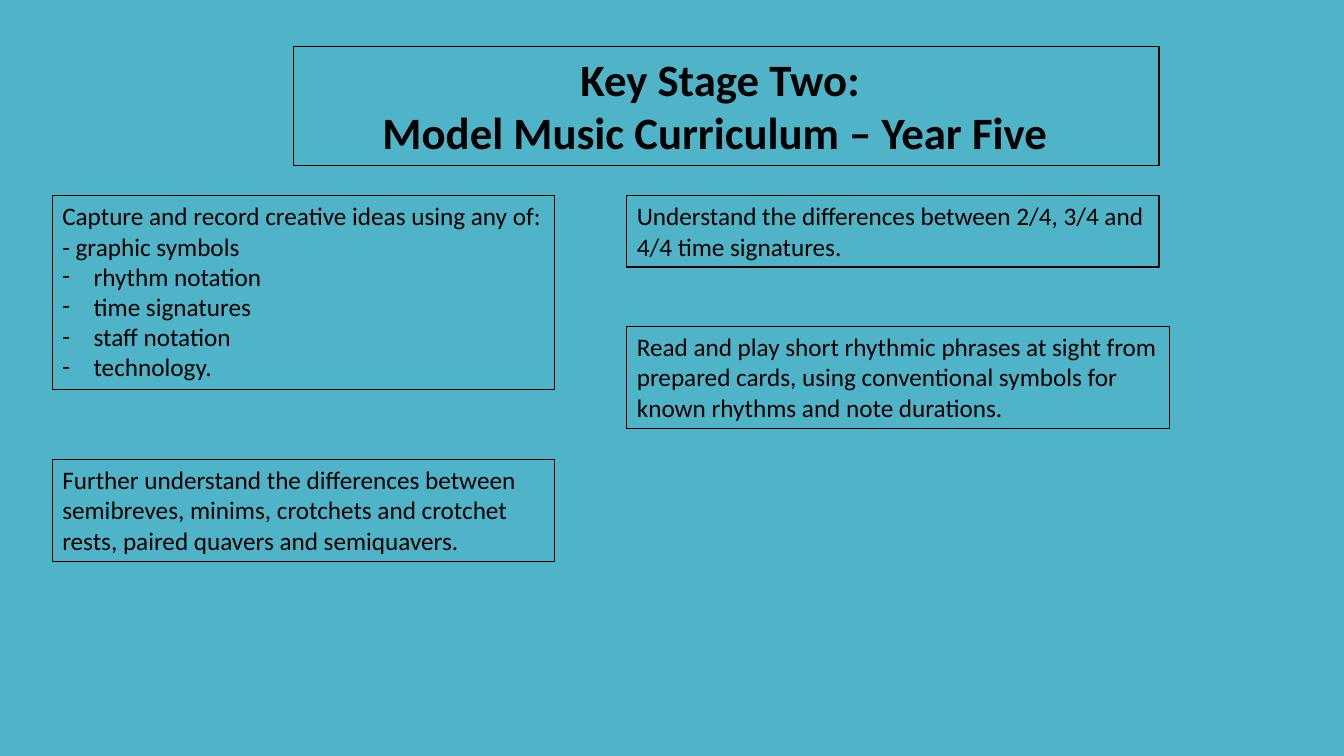
from dataclasses import dataclass

from lxml.etree import SubElement
from pptx import Presentation
from pptx.dml.color import RGBColor
from pptx.enum.shapes import MSO_SHAPE
from pptx.enum.text import MSO_ANCHOR, MSO_AUTO_SIZE, PP_ALIGN
from pptx.oxml.ns import qn
from pptx.slide import Slide
from pptx.util import Cm, Pt

FONT = "Calibri"
BACKGROUND = "50B4C8"
INK = "000000"
BULLET_INDENT = 0.79
LEFT_COLUMN, RIGHT_COLUMN = 1.32, 15.8
FIRST_ROW = 4.93


@dataclass(frozen=True)
class Line:
    text: str
    bullet: bool = False
    right_margin: float = 0


@dataclass(frozen=True)
class Box:
    left: float
    top: float
    width: float
    height: float
    lines: tuple[Line, ...]
    title: bool = False


BOXES = (
    Box(7.39, 1.17, 21.82, 3, (
        Line("Key Stage Two:", right_margin=0.3),
        Line("Model Music Curriculum – Year Five", right_margin=0.55),
    ), title=True),
    Box(LEFT_COLUMN, FIRST_ROW, 12.65, 4.88, (
        Line("Capture and record creative ideas using any of: - graphic symbols"),
        Line("rhythm notation", bullet=True),
        Line("time signatures", bullet=True),
        Line("staff notation", bullet=True),
        Line("technology.", bullet=True),
    )),
    Box(LEFT_COLUMN, 11.58, 12.65, 2.57, (
        Line("Further understand the differences between semibreves, minims, "
             "crotchets and crotchet rests, paired quavers and semiquavers."),
    )),
    Box(RIGHT_COLUMN, FIRST_ROW, 13.41, 1.8, (
        Line("Understand the differences between 2/4, 3/4 and 4/4 time signatures."),
    )),
    Box(RIGHT_COLUMN, 8.23, 13.67, 2.57, (
        Line("Read and play short rhythmic phrases at sight from prepared cards, "
             "using conventional symbols for known rhythms and note durations."),
    )),
)


def color(value: str) -> RGBColor:
    return RGBColor.from_string(value)


def add_line(paragraph, line: Line, title: bool) -> None:
    paragraph.alignment = PP_ALIGN.CENTER if title else PP_ALIGN.LEFT
    run = paragraph.add_run()
    run.text = line.text
    run.font.name = FONT
    run.font.size = Pt(32 if title else 18)
    run.font.bold = title
    run.font.color.rgb = color(INK)

    # Margins and dash bullets
    properties = paragraph._p.get_or_add_pPr()
    if line.right_margin:
        properties.set("marR", str(Cm(line.right_margin)))
    if line.bullet:
        properties.set("marL", str(Cm(BULLET_INDENT)))
        properties.set("indent", str(-Cm(BULLET_INDENT)))
        SubElement(properties, qn("a:buFont"), typeface=FONT)
        SubElement(properties, qn("a:buChar"), char="-")


def add_box(slide: Slide, box: Box) -> None:
    shape = slide.shapes.add_shape(
        MSO_SHAPE.RECTANGLE, Cm(box.left), Cm(box.top), Cm(box.width), Cm(box.height))
    shape.shadow.inherit = False
    shape.fill.background()
    shape.line.color.rgb = color(INK)
    shape.line.width = Pt(0.75)

    frame = shape.text_frame
    frame.word_wrap = True
    frame.auto_size = MSO_AUTO_SIZE.SHAPE_TO_FIT_TEXT
    frame.vertical_anchor = MSO_ANCHOR.TOP
    for index, line in enumerate(box.lines):
        paragraph = frame.add_paragraph() if index else frame.paragraphs[0]
        add_line(paragraph, line, box.title)


def main() -> None:
    presentation = Presentation()
    presentation.slide_width = Cm(33.87)
    presentation.slide_height = Cm(19.05)
    slide = presentation.slides.add_slide(presentation.slide_layouts[6])

    # Background
    slide.background.fill.solid()
    slide.background.fill.fore_color.rgb = color(BACKGROUND)

    # Title and curriculum statements
    for box in BOXES:
        add_box(slide, box)

    presentation.save("out.pptx")


if __name__ == "__main__":
    main()
